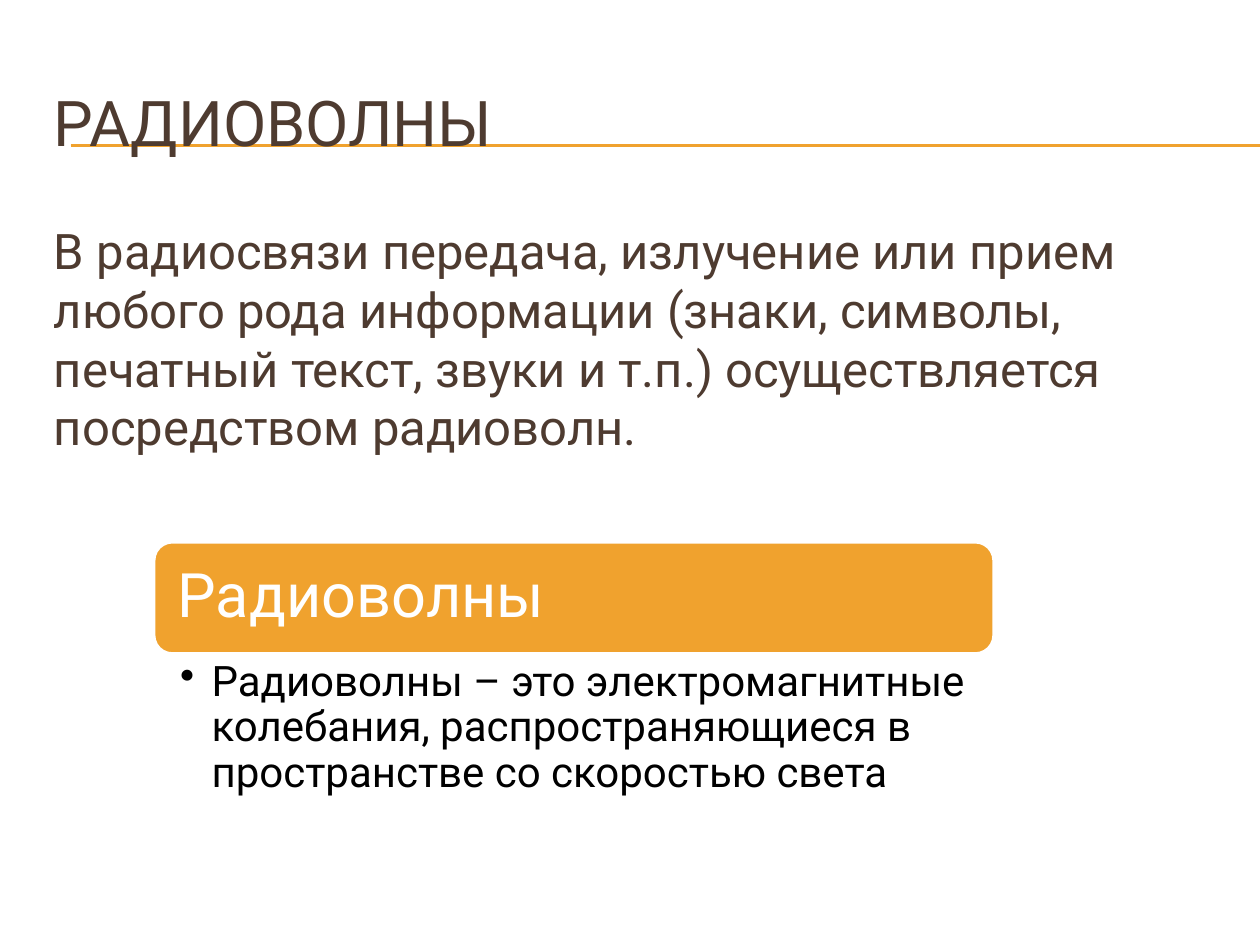
import dataclasses

import lxml.etree
import pptx
import pptx.dml.color
import pptx.enum.shapes
import pptx.enum.text
import pptx.oxml.ns
import pptx.util

Inches = pptx.util.Inches
Pt = pptx.util.Pt
Anchor = pptx.enum.text.MSO_ANCHOR


@dataclasses.dataclass(frozen=True)
class Theme:
    font: str = "Roboto"
    brown: str = "4E3B30"
    amber: str = "F0A22E"
    white: str = "FFFFFF"
    black: str = "000000"
    title: int = 36
    heading: int = 35
    body: int = 28
    definition: int = 24


THEME = Theme()


def rgb(value):
    return pptx.dml.color.RGBColor.from_string(value)


def apply_format(target, values):
    for name, value in values.items():
        setattr(target, name, value)


def add_rule(slide, y):
    """Thin line running from the left margin to the slide's right edge."""
    rule = slide.shapes.add_connector(
        pptx.enum.shapes.MSO_CONNECTOR.STRAIGHT,
        Inches(0.56), Inches(y), Inches(10), Inches(y))
    rule.line.color.rgb = rgb(THEME.amber)
    rule.line.width = Pt(0.75)
    lxml.etree.SubElement(rule._element.spPr, pptx.oxml.ns.qn("a:effectLst"))


def add_banner(slide, box):
    banner = slide.shapes.add_shape(
        pptx.enum.shapes.MSO_SHAPE.ROUNDED_RECTANGLE, *map(Inches, box))
    banner.shadow.inherit = False
    banner.fill.solid()
    banner.fill.fore_color.rgb = rgb(THEME.amber)
    banner.line.color.rgb = rgb(THEME.white)
    banner.line.width = Pt(2)


def add_text(slide, box, text, size, color, frame_format=None, spacing=None):
    """Wrapped text box with one paragraph, which is returned."""
    frame = slide.shapes.add_textbox(*map(Inches, box)).text_frame
    apply_format(frame, {"word_wrap": True, **(frame_format or {})})
    paragraph = frame.paragraphs[0]
    apply_format(paragraph, spacing or {})
    run = paragraph.add_run()
    run.text = text
    apply_format(run.font, {"name": THEME.font, "size": Pt(size)})
    run.font.color.rgb = rgb(color)
    return paragraph


def add_bullet(paragraph, indent):
    properties = paragraph._p.get_or_add_pPr()
    properties.set("marL", str(Inches(indent)))
    properties.set("indent", str(-Inches(indent)))
    bullet = lxml.etree.SubElement(properties, pptx.oxml.ns.qn("a:buChar"))
    bullet.set("char", "•")


def main():
    deck = pptx.Presentation()
    apply_format(deck, {"slide_width": Inches(10), "slide_height": Inches(7.5)})
    slide = deck.slides.add_slide(deck.slide_layouts[6])

    # Double rule behind the title
    for y in (1.15, 1.16):
        add_rule(slide, y)

    # Title and introduction
    add_text(slide, (0.33, 0.5, 9.5, 0.92), "РАДИОВОЛНЫ", THEME.title,
             THEME.brown, {"vertical_anchor": Anchor.MIDDLE})
    add_text(slide, (0.33, 1.7, 9.5, 2.21),
             "В радиосвязи передача, излучение или прием любого рода "
             "информации (знаки, символы, печатный текст, звуки и т.п.) "
             "осуществляется посредством радиоволн.",
             THEME.body, THEME.brown,
             spacing={"space_before": Pt(0.2 * THEME.body)})

    # Term banner
    add_banner(slide, (1.22, 4.3, 6.67, 0.89))
    sides = ("left", "top", "right", "bottom")
    heading_format = {f"margin_{side}": Inches(0.15) for side in sides}
    add_text(slide, (1.26, 4.34, 6.58, 0.81), "Радиоволны", THEME.heading,
             THEME.white, {**heading_format, "vertical_anchor": Anchor.MIDDLE},
             {"line_spacing": 0.9, "space_after": Pt(0.35 * THEME.heading)})

    # Definition
    definition_format = {
        f"margin_{side}": Inches(inset)
        for side, inset in zip(sides, (0.21, 0.03, 0.19, 0.03))}
    definition = add_text(
        slide, (1.22, 5.21, 6.67, 0.39),
        "Радиоволны – это электромагнитные колебания, "
        "распространяющиеся в пространстве со скоростью света",
        THEME.definition, THEME.black, definition_format,
        {"level": 1, "line_spacing": 0.9,
         "space_after": Pt(0.2 * THEME.definition)})
    add_bullet(definition, 0.25)

    deck.save("out.pptx")


if __name__ == "__main__":
    main()
